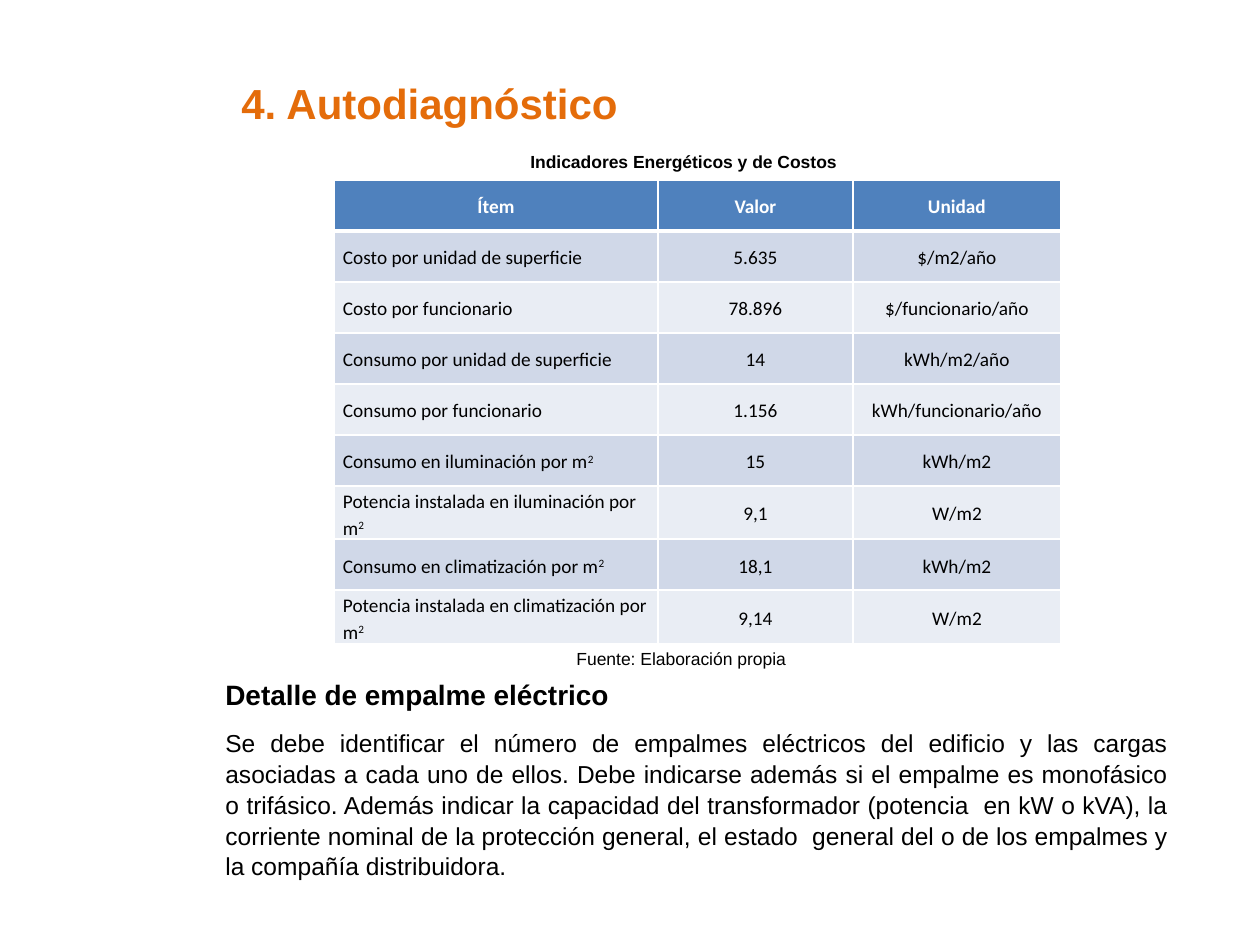
from lxml import etree
from pptx import Presentation
from pptx.dml.color import RGBColor
from pptx.enum.text import MSO_ANCHOR, PP_ALIGN
from pptx.oxml.ns import qn
from pptx.util import Pt

LEFT, CENTER, JUSTIFY = PP_ALIGN.LEFT, PP_ALIGN.CENTER, PP_ALIGN.JUSTIFY
MIDDLE = MSO_ANCHOR.MIDDLE

ORANGE = RGBColor(0xE4, 0x6C, 0x0A)
BLACK = RGBColor(0, 0, 0)
WHITE = RGBColor(0xFF, 0xFF, 0xFF)
HEADER_BLUE = RGBColor(0x4F, 0x81, 0xBD)
BAND_DARK = RGBColor(0xD0, 0xD8, 0xE8)
BAND_LIGHT = RGBColor(0xE9, 0xED, 0xF4)

PX = 914400 / 126


def add_text(left, top, width, height, paragraphs, color=BLACK):
    """Add a text box; each paragraph is (text, size, bold)."""
    box = slide.shapes.add_textbox(*(round(v * PX) for v in (left, top, width, height)))
    frame = box.text_frame
    frame.word_wrap = True
    frame.text = "\n".join(text for text, size, bold in paragraphs)
    for paragraph, (text, size, bold) in zip(frame.paragraphs, paragraphs):
        font = paragraph.runs[0].font
        font.name, font.size, font.bold = "Arial", Pt(size), bold
        font.color.rgb = color
    return frame


def add_border(cell, side, points):
    """Draw a white line on one side of a cell."""
    line = etree.SubElement(cell._tc.get_or_add_tcPr(), qn(f"a:ln{side}"), w=str(Pt(points)))
    fill = etree.SubElement(line, qn("a:solidFill"))
    etree.SubElement(fill, qn("a:srgbClr"), val=str(WHITE))


presentation = Presentation()
presentation.slide_width = round(1260 * PX)
presentation.slide_height = round(945 * PX)
slide = presentation.slides.add_slide(presentation.slide_layouts[6])

# Section text
body = add_text(213, 671, 968, 258, [
    ("Detalle de empalme eléctrico", 16, True),
    ("Se debe identificar el número de empalmes eléctricos del edificio y las cargas "
     "asociadas a cada uno de ellos. Debe indicarse además si el empalme es monofásico "
     "o trifásico. Además indicar la capacidad del transformador (potencia  en kW o kVA), "
     "la corriente nominal de la protección general, el estado  general del o de los "
     "empalmes y la compañía distribuidora.", 14, False),
])
heading, description = body.paragraphs
heading.alignment = description.alignment = JUSTIFY
heading.space_after = Pt(6)
description.space_before = Pt(3)
description.line_spacing = 1.05

# Title
add_text(229, 71, 906, 57, [("4. Autodiagnóstico", 24, True)], ORANGE)

# Indicator table; "^" marks a superscript
rows = [
    ("Ítem", "Valor", "Unidad"),
    ("Costo por unidad de superficie", "5.635", "$/m2/año"),
    ("Costo por funcionario", "78.896", "$/funcionario/año"),
    ("Consumo por unidad de superficie", "14", "kWh/m2/año"),
    ("Consumo por funcionario", "1.156", "kWh/funcionario/año"),
    ("Consumo en iluminación por m^2", "15", "kWh/m2"),
    ("Potencia instalada en iluminación por m^2", "9,1", "W/m2"),
    ("Consumo en climatización por m^2", "18,1", "kWh/m2"),
    ("Potencia instalada en climatización por m^2", "9,14", "W/m2"),
]
column_widths = [324, 195, 208]
row_height = 51
table = slide.shapes.add_table(
    len(rows), len(column_widths), round(334 * PX), round(180 * PX),
    round(sum(column_widths) * PX), round(len(rows) * row_height * PX)).table
table.first_row = table.horz_banding = False
for column, width in zip(table.columns, column_widths):
    column.width = round(width * PX)

for row_index, values in enumerate(rows):
    table.rows[row_index].height = round(row_height * PX)
    is_header = row_index == 0
    band = HEADER_BLUE if is_header else (BAND_LIGHT, BAND_DARK)[row_index % 2]
    for column_index, value in enumerate(values):
        cell = table.cell(row_index, column_index)
        for side in "LRTB":
            heavy = (is_header and side == "B") or (row_index == 1 and side == "T")
            add_border(cell, side, 3 if heavy else 1)
        cell.fill.solid()
        cell.fill.fore_color.rgb = band
        cell.vertical_anchor = MIDDLE
        cell.margin_left = cell.margin_right = round(9 * PX)
        cell.margin_top = cell.margin_bottom = 0
        paragraph = cell.text_frame.paragraphs[0]
        paragraph.alignment = CENTER if is_header or column_index else LEFT
        paragraph.line_spacing = 1.15
        for part_index, part in enumerate(value.split("^")):
            run = paragraph.add_run()
            run.text = part
            run.font.name, run.font.size, run.font.bold = "Calibri", Pt(11), is_header
            run.font.color.rgb = WHITE if is_header else BLACK
            if part_index:
                run.font._element.set("baseline", "30000")

# Table caption and source
add_text(518, 145, 557, 34, [("Indicadores Energéticos y de Costos", 10, True)])
add_text(564, 642, 281, 34, [("Fuente: Elaboración propia", 10, False)])

presentation.save("out.pptx")
